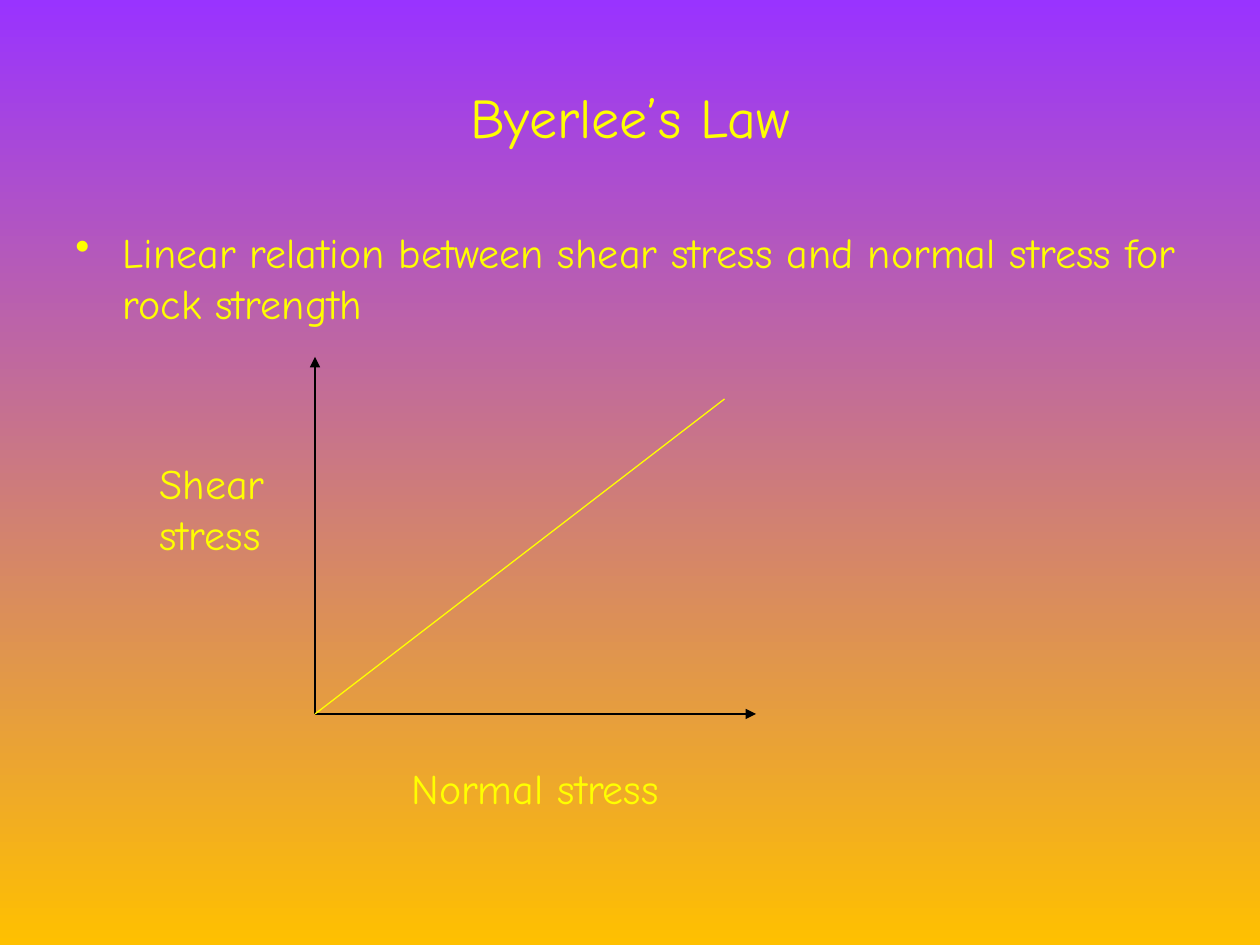
from lxml.etree import SubElement
from pptx import Presentation
from pptx.dml.color import RGBColor
from pptx.enum.shapes import MSO_CONNECTOR
from pptx.enum.text import MSO_ANCHOR, MSO_AUTO_SIZE, PP_ALIGN
from pptx.oxml.ns import qn
from pptx.util import Pt

YELLOW = RGBColor(0xFF, 0xFF, 0x00)
BLACK = RGBColor(0x00, 0x00, 0x00)
PURPLE = RGBColor(0x99, 0x33, 0xFF)
AMBER = RGBColor(0xFF, 0xC0, 0x00)
FONT = "Comic Neue"

TITLE = ("Byerlee’s Law", (36, 21.6, 648, 90))
BULLET = ("Linear relation between shear stress and normal stress for rock strength",
          (36, 126, 648, 356.4))
AXIS_LABELS = [
    ("Shear stress", (84, 258, 126, 64.8)),
    ("Normal stress", (228, 432, 198, 36)),
]
ORIGIN = (180, 408)
LINES = [
    ((180, 204), ORIGIN, BLACK, "headEnd"),
    (ORIGIN, (432, 408), BLACK, "tailEnd"),
    (ORIGIN, (414, 228), YELLOW, None),
]
INDENT = Pt(27)


def write(sp, text, size, frame):
    tf = sp.text_frame
    for name, value in frame.items():
        setattr(tf, name, value)
    p = tf.paragraphs[0]
    r = p.add_run()
    r.text = text
    for name, value in {"name": FONT, "size": Pt(size)}.items():
        setattr(r.font, name, value)
    r.font.color.rgb = YELLOW
    return p


def add_text(s, text, box):
    sp = s.shapes.add_textbox(*map(Pt, box))
    return write(sp, text, 24, {"word_wrap": True, "auto_size": MSO_AUTO_SIZE.NONE})


def add_line(s, start, end, color, arrow):
    line = s.shapes.add_connector(MSO_CONNECTOR.STRAIGHT, *map(Pt, start + end))
    line.line.color.rgb = color
    line.line.width = Pt(0.75)
    if arrow:
        SubElement(line.line._get_or_add_ln(), qn("a:" + arrow), type="triangle")
    SubElement(line._element.spPr, qn("a:effectLst"))


def main():
    prs = Presentation()
    prs.slide_width, prs.slide_height = Pt(720), Pt(540)
    s = prs.slides.add_slide(prs.slide_layouts[5])

    fill = s.background.fill
    fill.gradient()
    fill.gradient_angle = 270
    for stop, color, position in zip(fill.gradient_stops, (PURPLE, AMBER), (0, 1)):
        stop.color.rgb = color
        stop.position = position

    text, box = TITLE
    title = s.shapes.title
    for name, value in zip(("left", "top", "width", "height"), box):
        setattr(title, name, Pt(value))
    p = write(title, text, 32, {"word_wrap": True, "auto_size": MSO_AUTO_SIZE.NONE,
                                "vertical_anchor": MSO_ANCHOR.MIDDLE})
    p.alignment = PP_ALIGN.CENTER

    pPr = add_text(s, *BULLET)._p.get_or_add_pPr()
    pPr.set("marL", str(INDENT))
    pPr.set("indent", str(-INDENT))
    SubElement(pPr, qn("a:buChar"), char="•")

    for line in LINES:
        add_line(s, *line)
    for label in AXIS_LABELS:
        add_text(s, *label)

    prs.save("out.pptx")


if __name__ == "__main__":
    main()
